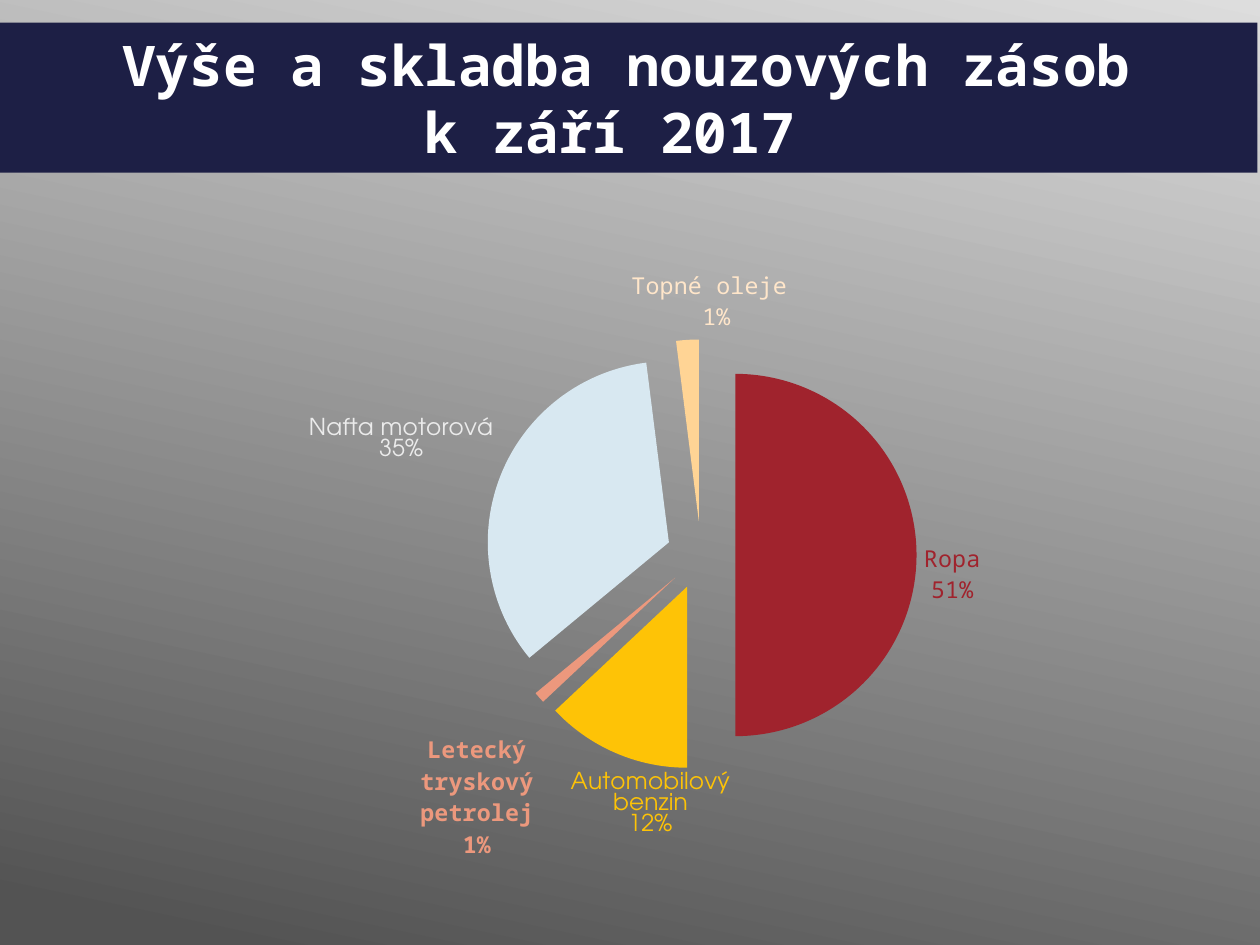
from lxml import etree
from pptx import Presentation, util as u
from pptx.chart.data import CategoryChartData
from pptx.dml.color import RGBColor
from pptx.enum import chart as c, text as t
from pptx.oxml.ns import qn

TITLE = "Výše a skladba nouzových zásob k\u00a0září 2017 "
MONO, SANS = "Noto Sans Mono", "TeX Gyre Adventor"
COLORS = {
    "light": "DDDDDD", "dark": "535353", "banner": "1D1F45", "white": "FFFFFF",
    "red": "A0232D", "yellow": "FEC306", "salmon": "EC987D", "blue": "D8E8F1",
    "peach": "FFD495", "grey": "EBEBEB", "cream": "FFE6CA",
}
# category, value, label share (None: computed), slice colour, label colour,
# label font, label shift as a fraction of the chart
STOCKS = [
    ("Ropa", 50, "51%", "red", "red", MONO, (0, 0.03)),
    ("Automobilový benzin", 13, "12%", "yellow", "yellow", SANS, (0.12, 0.02)),
    ("Letecký tryskový petrolej", 1, None, "salmon", "salmon", MONO, (0, 0.05)),
    ("Nafta motorová", 34, "35%", "blue", "grey", SANS, (0, -0.02)),
    ("Topné oleje ", 2, "1%", "peach", "cream", MONO, (0.03, 0)),
]
LABEL_SIZE = 13.3
EXPLOSION = 19
PLOT_AREA = {"x": 0.34, "y": 0.14, "w": 0.44, "h": 0.69}


def rgb(name):
    return RGBColor.from_string(COLORS[name])


def set_font(font, name, size, color, bold=False):
    font.name, font.size, font.bold = name, u.Pt(size), bold
    font.color.rgb = rgb(color)


def add_chart_element(parent, tag, value):
    return etree.SubElement(parent, qn(f"c:{tag}"), val=str(value))


presentation = Presentation()
presentation.slide_width, presentation.slide_height = u.Inches(10), u.Inches(7.5)
slide = presentation.slides.add_slide(presentation.slide_layouts[5])

# Background gradient
background = slide.background.fill
background.gradient()
background.gradient_angle = 258
for stop, position, color in zip(background.gradient_stops, (0, 0.96), ("light", "dark")):
    stop.position = position
    stop.color.rgb = rgb(color)

# Title banner
title = slide.shapes.title
title.left, title.top = u.Inches(-0.03), u.Inches(0.18)
title.width, title.height = u.Inches(10.01), u.Inches(1.19)
title.fill.solid()
title.fill.fore_color.rgb = rgb("banner")
title.text_frame.text = TITLE
title.text_frame.auto_size = t.MSO_AUTO_SIZE.NONE
title.text_frame.vertical_anchor = t.MSO_ANCHOR.MIDDLE
paragraph = title.text_frame.paragraphs[0]
paragraph.alignment = t.PP_ALIGN.CENTER
set_font(paragraph.font, MONO, 32, "white", True)

# Pie chart
data = CategoryChartData()
data.categories = [stock[0] for stock in STOCKS]
data.add_series("Series 1", [stock[1] for stock in STOCKS])
chart = slide.shapes.add_chart(
    c.XL_CHART_TYPE.PIE, u.Inches(1.19), u.Inches(2), u.Inches(7.81), u.Inches(4.96), data
).chart
chart.has_legend = chart.has_title = False
set_font(chart.font, SANS, 10, "white")
plot = chart.plots[0]
plot.vary_by_categories = True
series = plot.series[0]

# Labels shared by all slices
labels = series.data_labels
labels.show_value = False
labels.show_percentage = labels.show_category_name = True
labels.number_format, labels.number_format_is_linked = "0%", False
labels.position = c.XL_LABEL_POSITION.OUTSIDE_END

# Slice colours and individual labels
for index, (name, value, share, fill, color, font, shift) in enumerate(STOCKS):
    point = series.points[index]
    point.format.fill.solid()
    point.format.fill.fore_color.rgb = rgb(fill)
    label = point.data_label
    if share:
        frame = label.text_frame
        frame.text = f"{name}\n{share}"
        for paragraph in frame.paragraphs:
            for run in paragraph.runs:
                set_font(run.font, font, LABEL_SIZE, color)
    else:
        set_font(label.font, font, LABEL_SIZE, color, True)
    label.position = c.XL_LABEL_POSITION.OUTSIDE_END

# Every label is shifted and shows category and percentage on separate lines
for label in plot._element.iter(qn("c:dLbl")):
    for tag, shown in (("showVal", 0), ("showCatName", 1), ("showPercent", 1)):
        label.find(qn(f"c:{tag}")).set("val", str(shown))
    separator = etree.Element(qn("c:separator"))
    separator.text = "\n"
    label.find(qn("c:showBubbleSize")).addnext(separator)
    index = label.find(qn("c:idx"))
    label_layout = etree.Element(qn("c:layout"))
    index.addnext(label_layout)
    label_manual = etree.SubElement(label_layout, qn("c:manualLayout"))
    for axis, offset in zip("xy", STOCKS[int(index.get("val"))][-1]):
        add_chart_element(label_manual, axis, offset)

# No leader lines
for leader in plot._element.iter(qn("c:showLeaderLines")):
    leader.set("val", "0")

# Exploded slices
explosion = etree.Element(qn("c:explosion"), val=str(EXPLOSION))
series._element.find(qn("c:dPt")).addprevious(explosion)
for slice_point in series._element.findall(qn("c:dPt")):
    slice_point.find(qn("c:spPr")).addprevious(
        etree.Element(qn("c:explosion"), val=str(EXPLOSION)))

# Fixed plot area
plot_area = plot._element.getparent()
layout = plot_area.find(qn("c:layout"))
if layout is None:
    layout = etree.Element(qn("c:layout"))
    plot_area.insert(0, layout)
manual = etree.SubElement(layout, qn("c:manualLayout"))
add_chart_element(manual, "layoutTarget", "inner")
for axis in "xy":
    add_chart_element(manual, f"{axis}Mode", "edge")
for tag, value in PLOT_AREA.items():
    add_chart_element(manual, tag, value)

presentation.save("out.pptx")
